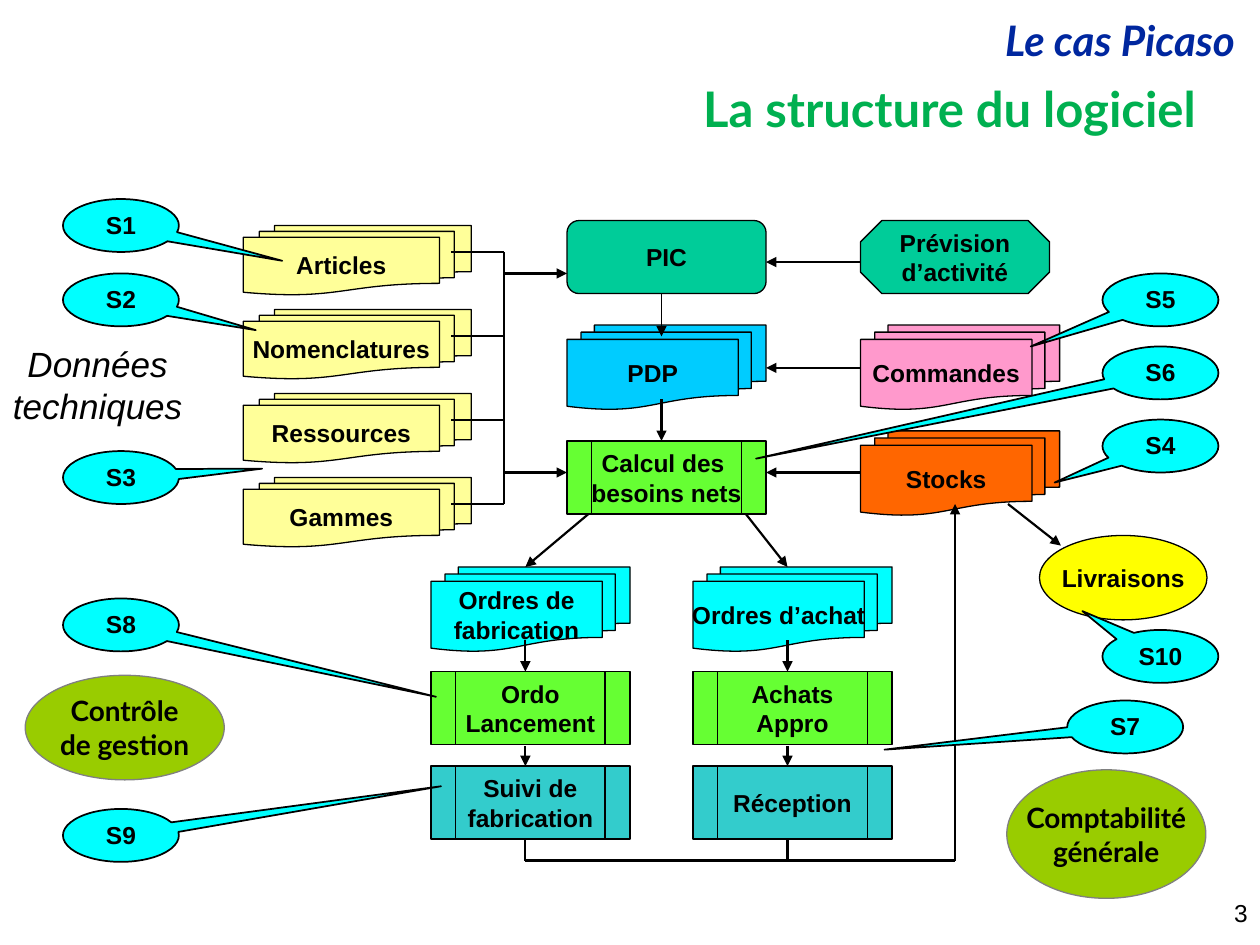
from dataclasses import dataclass

from lxml.etree import SubElement
from pptx import Presentation
from pptx.dml.color import RGBColor
from pptx.enum.shapes import MSO_CONNECTOR, MSO_SHAPE
from pptx.enum.text import MSO_ANCHOR, PP_ALIGN
from pptx.oxml.ns import qn
from pptx.util import Inches, Pt


@dataclass(frozen=True)
class Theme:
    """Colours, fonts and type sizes of the slide."""

    black: str = "000000"
    grey: str = "808080"
    navy: str = "00279F"
    title_green: str = "00B050"
    data_yellow: str = "FFFF99"
    planning_green: str = "00CC99"
    schedule_blue: str = "00CCFF"
    order_pink: str = "FF99CC"
    stock_orange: str = "FF6600"
    cyan: str = "00FFFF"
    process_green: str = "66FF33"
    tracking_teal: str = "33CCCC"
    delivery_yellow: str = "FFFF00"
    control_green: str = "99CC00"
    body_font: str = "Arial"
    heading_font: str = "Lato"
    label_size: int = 14
    control_size: int = 16
    side_size: int = 20
    header_size: int = 24
    title_size: int = 28


class FlowSlide:
    """Draws flowchart elements on one slide in one style."""

    def __init__(self, slide, theme):
        """Keep the slide and its theme."""
        self.slide = slide
        self.theme = theme

    def add_lines(self, frame, lines, size=None, font=None, color=None, bold=True,
                  italic=False, align=PP_ALIGN.CENTER, spacing=None):
        """Fill a text frame with one paragraph for each line."""
        for index, line in enumerate(lines):
            paragraph = frame.add_paragraph() if index else frame.paragraphs[0]
            paragraph.alignment = align
            paragraph.line_spacing = spacing
            run = paragraph.add_run()
            run.text = line
            run.font.size = Pt(size or self.theme.label_size)
            run.font.name = font or self.theme.body_font
            run.font.bold = bold
            run.font.italic = italic
            run.font.color.rgb = RGBColor.from_string(color or self.theme.black)

    def title(self, text, left, top, width, height):
        """Place the title placeholder."""
        shape = self.slide.shapes.title
        shape.left, shape.top = Inches(left), Inches(top)
        shape.width, shape.height = Inches(width), Inches(height)
        shape.text_frame.vertical_anchor = MSO_ANCHOR.MIDDLE
        self.add_lines(shape.text_frame, [text], self.theme.title_size,
                       self.theme.heading_font, self.theme.title_green,
                       align=PP_ALIGN.RIGHT)

    def text(self, lines, left, top, width, height, wrap=True, **style):
        """Add a free text box."""
        box = self.slide.shapes.add_textbox(
            Inches(left), Inches(top), Inches(width), Inches(height))
        box.text_frame.word_wrap = wrap
        self.add_lines(box.text_frame, lines, **style)

    def node(self, kind, lines, left, top, width, height, fill,
             outline=None, weight=0.75, **style):
        """Add a filled shape with a centred label."""
        shape = self.slide.shapes.add_shape(
            kind, Inches(left), Inches(top), Inches(width), Inches(height))
        shape.shadow.inherit = False
        shape.fill.solid()
        shape.fill.fore_color.rgb = RGBColor.from_string(fill)
        shape.line.color.rgb = RGBColor.from_string(outline or self.theme.black)
        shape.line.width = Pt(weight)
        shape.text_frame.word_wrap = False
        shape.text_frame.vertical_anchor = MSO_ANCHOR.MIDDLE
        self.add_lines(shape.text_frame, lines, **style)
        return shape

    def callout(self, label, left, top, tip_x, tip_y):
        """Add an oval callout whose tail ends at the given tip."""
        width, height = 0.92, 0.42
        shape = self.node(MSO_SHAPE.OVAL_CALLOUT, [label], left, top, width,
                          height, self.theme.cyan, weight=1, spacing=0.9)
        shape.adjustments[0] = (tip_x - left) / width - 0.5
        shape.adjustments[1] = (tip_y - top) / height - 0.5
        shape.text_frame.word_wrap = True
        shape.text_frame.vertical_anchor = MSO_ANCHOR.TOP

    def line(self, start_x, start_y, end_x, end_y, weight=1.25, arrow=True):
        """Add a straight line, with an arrowhead at its end if wanted."""
        connector = self.slide.shapes.add_connector(
            MSO_CONNECTOR.STRAIGHT, Inches(start_x), Inches(start_y),
            Inches(end_x), Inches(end_y))
        connector.line.color.rgb = RGBColor.from_string(self.theme.black)
        connector.line.width = Pt(weight)
        properties = connector.element.spPr
        if arrow:
            SubElement(properties.find(qn("a:ln")), qn("a:tailEnd"), type="triangle")
        SubElement(properties, qn("a:effectLst"))


def draw_headings(page, theme):
    """Add the header, title, side label and page number."""
    page.text(["Le cas Picaso"], 2.32, 0.11, 7.58, 0.46, size=theme.header_size,
              font=theme.heading_font, color=theme.navy, italic=True,
              align=PP_ALIGN.RIGHT, spacing=0.9)
    page.title("La structure du logiciel", 0.51, 0.48, 9.08, 0.75)
    page.text(["3"], 7.92, 7.08, 2.08, 0.25, bold=False, align=PP_ALIGN.RIGHT)
    page.text(["Données", "techniques"], 0, 2.67, 1.55, 0.77, wrap=False,
              size=theme.side_size, bold=False, italic=True)


def draw_nodes(page, theme):
    """Draw the files, processes and plans."""
    files = MSO_SHAPE.FLOWCHART_MULTIDOCUMENT
    process = MSO_SHAPE.FLOWCHART_PREDEFINED_PROCESS
    for row, name in enumerate(["Articles", "Nomenclatures", "Ressources", "Gammes"]):
        page.node(files, [name], 1.93, 1.79 + row * 2 / 3, 1.81, 0.55,
                  theme.data_yellow)
    page.node(MSO_SHAPE.FLOWCHART_ALTERNATE_PROCESS, ["PIC"],
              4.5, 1.75, 1.58, 0.58, theme.planning_green)
    page.node(MSO_SHAPE.OCTAGON, ["Prévision", "d’activité"],
              6.83, 1.75, 1.5, 0.58, theme.planning_green)
    for lines, left, top, fill in [
        (["Ordres de", "fabrication"], 3.42, 4.5, theme.cyan),
        (["Ordres d’achat"], 5.5, 4.5, theme.cyan),
        (["Stocks"], 6.83, 3.42, theme.stock_orange),
        (["PDP"], 4.5, 2.58, theme.schedule_blue),
        (["Commandes"], 6.83, 2.58, theme.order_pink),
    ]:
        page.node(files, lines, left, top, 1.58, 0.67, fill)
    for lines, left, top, fill in [
        (["Calcul des ", "besoins nets"], 4.5, 3.5, theme.process_green),
        (["Ordo", "Lancement"], 3.42, 5.33, theme.process_green),
        (["Achats", "Appro"], 5.5, 5.33, theme.process_green),
        (["Suivi de", "fabrication"], 3.42, 6.08, theme.tracking_teal),
        (["Réception"], 5.5, 6.08, theme.tracking_teal),
    ]:
        page.node(process, lines, left, top, 1.58, 0.58, fill)
    page.node(MSO_SHAPE.OVAL, ["Livraisons"], 8.25, 4.25, 1.33, 0.67,
              theme.delivery_yellow)
    for lines, left, top, height in [
        (["Contrôle", "de gestion"], 0.2, 5.36, 0.83),
        (["Comptabilité", "générale"], 7.99, 6.11, 1.02),
    ]:
        page.node(MSO_SHAPE.OVAL, lines, left, top, 1.58, height,
                  theme.control_green, theme.grey, size=theme.control_size,
                  font=theme.heading_font)


def draw_flows(page):
    """Draw the links between the nodes."""
    page.line(4, 2, 4, 4, 1.5, False)
    for row in range(4):
        level = 2 + row * 2 / 3
        page.line(3.58, level, 4, level, 1.5, False)
    for level in (2.17, 3.75):
        page.line(4, level, 4.5, level, 1.5)
    for level in (2.08, 2.92, 3.75):
        page.line(6.83, level, 6.08, level)
    page.line(5.25, 2.33, 5.25, 2.67, 1)
    page.line(5.25, 3.17, 5.25, 3.5)
    page.line(4.67, 4.08, 4.17, 4.5)
    page.line(5.92, 4.08, 6.25, 4.5)
    for column in (4.17, 6.25):
        page.line(column, 5.08, column, 5.33)
        page.line(column, 5.92, column, 6.08)
        page.line(column, 6.67, column, 6.83, arrow=False)
    page.line(4.17, 6.83, 7.58, 6.83, arrow=False)
    page.line(7.58, 6.83, 7.58, 4)
    page.line(8, 4, 8.42, 4.33)


def draw_callouts(page):
    """Draw the numbered callouts."""
    for label, left, top, tip_x, tip_y in [
        ("S1", 0.5, 1.58, 2.24, 2.07), ("S2", 0.5, 2.17, 2.03, 2.62),
        ("S3", 0.5, 3.58, 2.08, 3.72), ("S4", 8.75, 3.33, 8.37, 3.83),
        ("S5", 8.75, 2.17, 8.18, 2.75), ("S6", 8.75, 2.75, 6, 3.64),
        ("S7", 8.47, 5.56, 7.02, 5.95), ("S8", 0.5, 4.75, 3.46, 5.53),
        ("S9", 0.5, 6.42, 3.5, 6.24), ("S10", 8.75, 5, 8.59, 4.85),
    ]:
        page.callout(label, left, top, tip_x, tip_y)


def main():
    """Build and save the slide."""
    presentation = Presentation()
    presentation.slide_width, presentation.slide_height = Inches(10), Inches(7.5)
    theme = Theme()
    page = FlowSlide(presentation.slides.add_slide(presentation.slide_layouts[5]), theme)
    draw_headings(page, theme)
    draw_nodes(page, theme)
    draw_flows(page)
    draw_callouts(page)
    presentation.save("out.pptx")


if __name__ == "__main__":
    main()
